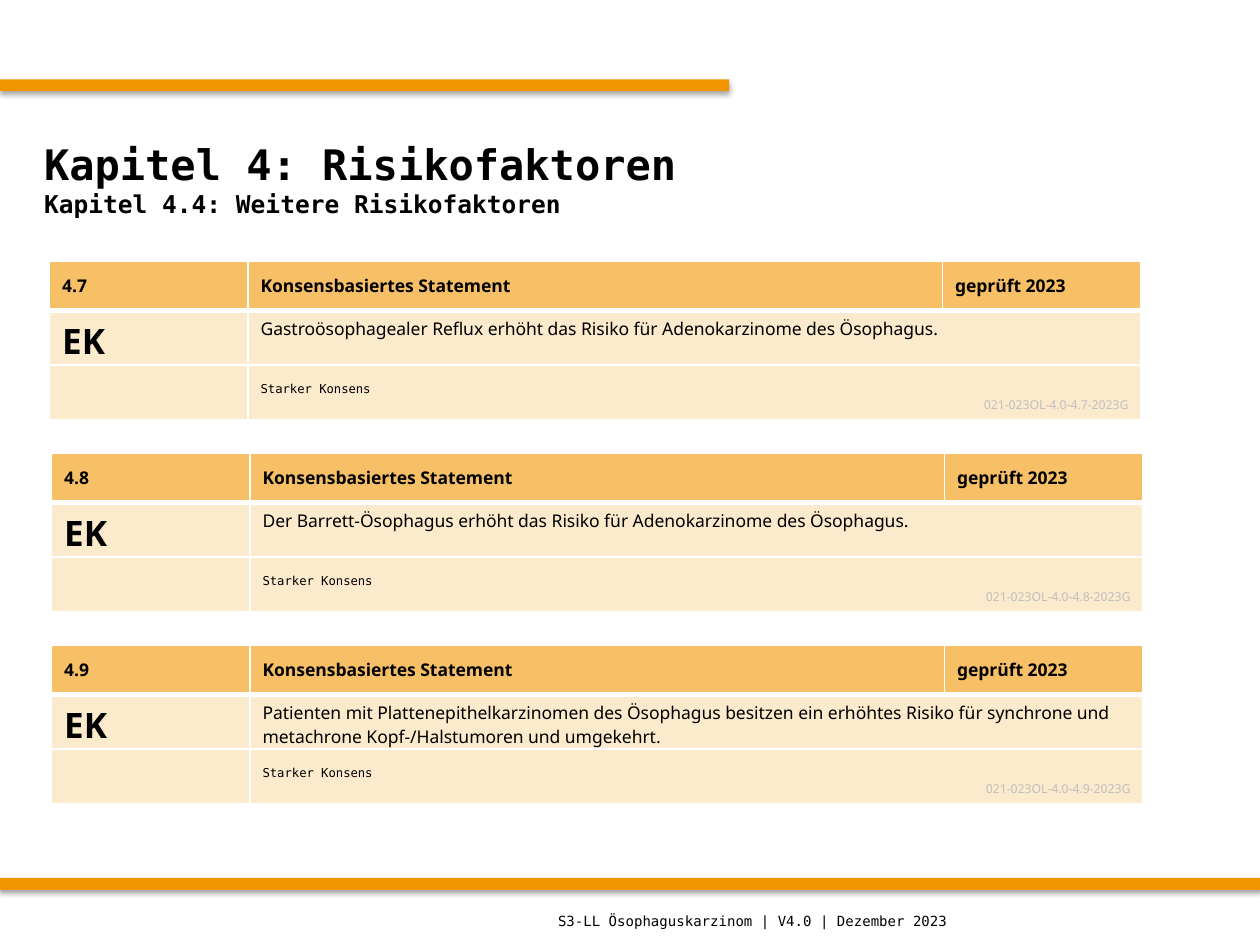
from lxml.etree import SubElement, fromstring
from pptx import Presentation
from pptx.dml.color import RGBColor
from pptx.enum.shapes import MSO_SHAPE
from pptx.enum.text import MSO_ANCHOR, PP_ALIGN
from pptx.oxml.ns import qn
from pptx.util import Cm, Pt

# Content
title = [("Kapitel 4: Risikofaktoren", "head"),
         ("Kapitel 4.4: Weitere Risikofaktoren", "sub")]
footer = [("S3-LL Ösophaguskarzinom | V4.0 | Dezember 2023", "foot")]
items = [
    ("4.7", "Gastroösophagealer Reflux erhöht das Risiko für Adenokarzinome "
            "des Ösophagus."),
    ("4.8", "Der Barrett-Ösophagus erhöht das Risiko für Adenokarzinome "
            "des Ösophagus."),
    ("4.9", "Patienten mit Plattenepithelkarzinomen des Ösophagus besitzen ein "
            "erhöhtes Risiko für synchrone und metachrone Kopf-/Halstumoren "
            "und umgekehrt."),
]

# Theme: colours and type styles
MONO, SANS = "DejaVu Sans Mono", "Noto Sans"
theme = {
    "bar": "F29400", "top": "F7BF66", "body": "FCEACC", "line": "FFFFFF",
    "ink": "000000", "pale": "BFBFBF",
    "head": {"name": MONO, "size": Pt(24), "bold": True},
    "sub": {"name": MONO, "size": Pt(14), "bold": True},
    "foot": {"name": MONO, "size": Pt(8), "bold": False},
    "label": {"name": SANS, "size": Pt(10), "bold": True},
    "grade": {"name": SANS, "size": Pt(20), "bold": True},
    "text": {"name": SANS, "size": Pt(10), "bold": False},
    "vote": {"name": MONO, "size": Pt(7), "bold": False},
    "code": {"name": SANS, "size": Pt(7), "bold": False},
}

# Layout in centimetres
WIDE, HIGH = 25.4, 19.05
bars = [(0, 1.6, 14.7, 0.24), (0, 17.7, WIDE, 0.24)]
lefts = [1, 1.04, 1.04]
first, pitch = 5.26, 3.87
cols, rows = [4, 14, 4], [1, 1, 1.1]

SHADE = (
    '<a:effectLst xmlns:a="http://schemas.openxmlformats.org/drawingml/2006/main">'
    '<a:outerShdw blurRad="39400" dist="22900" dir="5400000" rotWithShape="0">'
    '<a:srgbClr val="000000"><a:alpha val="35000"/></a:srgbClr>'
    '</a:outerShdw></a:effectLst>')


def color(name):
    return RGBColor.from_string(theme[name])


def write(frame, paras):
    for i, (text, style) in enumerate(paras):
        para = frame.add_paragraph() if i else frame.paragraphs[0]
        para.alignment = PP_ALIGN.RIGHT if style == "code" else PP_ALIGN.LEFT
        run = para.add_run()
        run.text = text
        for key, value in theme[style].items():
            setattr(run.font, key, value)
        run.font.color.rgb = color("pale" if style == "code" else "ink")


def add_text(slide, box, paras):
    frame = slide.shapes.add_textbox(*map(Cm, box)).text_frame
    frame.word_wrap = True
    frame.vertical_anchor = MSO_ANCHOR.MIDDLE
    write(frame, paras)


def add_bar(slide, box):
    bar = slide.shapes.add_shape(MSO_SHAPE.RECTANGLE, *map(Cm, box))
    bar.fill.solid()
    bar.fill.fore_color.rgb = color("bar")
    bar.line.fill.background()
    bar._element.spPr.append(fromstring(SHADE))


def edge(cell, row):
    """White cell borders, with a thick rule below the header row."""
    props = cell._tc.get_or_add_tcPr()
    wide = {"T": 3 if row == 1 else 1, "B": 3 if row == 0 else 1}
    for i, side in enumerate("LRTB"):
        line = SubElement(props, qn(f"a:ln{side}"), w=str(Pt(wide.get(side, 1))))
        fill = SubElement(line, qn("a:solidFill"))
        SubElement(fill, qn("a:srgbClr"), val=theme["line"])
        props.insert(i, line)


def add_grid(slide, left, top, num, text):
    grid = slide.shapes.add_table(3, 3, Cm(left), Cm(top),
                                  Cm(sum(cols)), Cm(sum(rows))).table
    grid.horz_banding = False
    for parts, sizes, key in ((grid.columns, cols, "width"),
                              (grid.rows, rows, "height")):
        for part, size in zip(parts, sizes):
            setattr(part, key, Cm(size))
    for row in (1, 2):
        grid.cell(row, 1).merge(grid.cell(row, 2))

    mid, up, low = MSO_ANCHOR.MIDDLE, MSO_ANCHOR.TOP, MSO_ANCHOR.BOTTOM
    cells = {
        (0, 0): (mid, [(num, "label")]),
        (0, 1): (mid, [("Konsensbasiertes Statement", "label")]),
        (0, 2): (mid, [("geprüft 2023", "label")]),
        (1, 0): (up, [("EK", "grade")]),
        (1, 1): (up, [(text, "text")]),
        (2, 0): (up, []),
        (2, 1): (low, [("Starker Konsens", "vote"),
                       (f"021-023OL-4.0-{num}-2023G", "code")]),
    }
    for (row, col), (anchor, paras) in cells.items():
        cell = grid.cell(row, col)
        cell.vertical_anchor = anchor
        cell.fill.solid()
        cell.fill.fore_color.rgb = color("body" if row else "top")
        edge(cell, row)
        write(cell.text_frame, paras)


def main():
    deck = Presentation()
    deck.slide_width, deck.slide_height = Cm(WIDE), Cm(HIGH)
    slide = deck.slides.add_slide(deck.slide_layouts[6])

    # Bars, title and footer
    for box in bars:
        add_bar(slide, box)
    add_text(slide, (0.64, 2.11, 24.13, 2.97), title)
    add_text(slide, (11, 18.06, 14, 0.99), footer)

    # One table per statement
    for i, (left, item) in enumerate(zip(lefts, items)):
        add_grid(slide, left, first + i * pitch, *item)

    deck.save("out.pptx")


if __name__ == "__main__":
    main()
